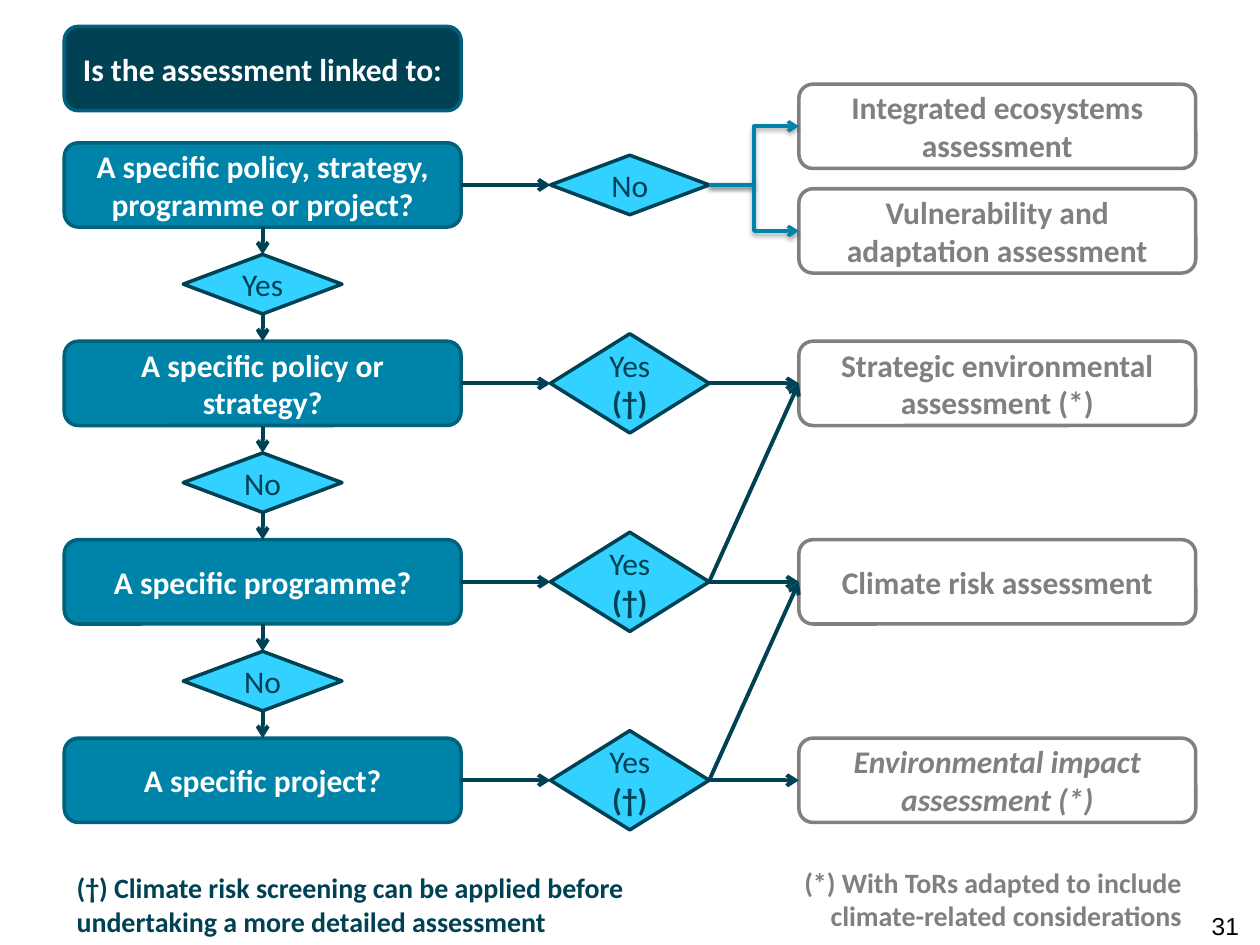
from lxml import etree
from pptx import Presentation
from pptx.dml.color import RGBColor
from pptx.enum import shapes, text
from pptx.oxml import ns
from pptx.util import Pt

NAVY = RGBColor(0x00, 0x42, 0x54)
TEAL = RGBColor(0x00, 0x83, 0xA9)
TEAL_EDGE = RGBColor(0x00, 0x61, 0x7D)
CYAN = RGBColor(0x32, 0xD1, 0xFF)
GREY = RGBColor(0x80, 0x80, 0x80)
WHITE = RGBColor(0xFF, 0xFF, 0xFF)
BLACK = RGBColor(0x00, 0x00, 0x00)

# Column centres, row centres and sizes, in points
LEFT, MIDDLE, RIGHT = 150.1, 359.9, 569.9
ROWS = [105.7 + 113.4 * row for row in range(4)]
BOX = (226.8, 48.2)
LOW_DIAMOND = (90.7, 34)
TALL_DIAMOND = (90.7, 56.7)

# Connection sites of boxes and diamonds
TOP_SITE, LEFT_SITE, BOTTOM_SITE, RIGHT_SITE = range(4)


class FlowChart:
    """Holds the style and the current slide."""

    font = "Calibri"

    def __init__(self, slide):
        self.slide = slide

    def format_run(self, run, size, color, bold=False, italic=False, font=None):
        run.font.name = font or self.font
        run.font.size = Pt(size)
        run.font.color.rgb = color
        run.font.bold = bold
        run.font.italic = italic

    def node(self, kind, center, size, fill, edge):
        (x, y), (width, height) = center, size
        shape = self.slide.shapes.add_shape(
            kind, Pt(x - width / 2), Pt(y - height / 2), Pt(width), Pt(height))
        shape.shadow.inherit = False
        shape.fill.solid()
        shape.fill.fore_color.rgb = fill
        shape.line.color.rgb = edge
        shape.line.width = Pt(2)
        shape.text_frame.word_wrap = True
        shape.text_frame.vertical_anchor = text.MSO_ANCHOR.MIDDLE
        shape.text_frame.paragraphs[0].alignment = text.PP_ALIGN.CENTER
        return shape

    def box(self, label, x, y, fill, edge, color, italic=False):
        shape = self.node(shapes.MSO_SHAPE.ROUNDED_RECTANGLE, (x, y), BOX, fill, edge)
        paragraph = shape.text_frame.paragraphs[0]
        paragraph.text = label
        self.format_run(paragraph.runs[0], 18, color, True, italic)
        return shape

    def question(self, label, y, fill=TEAL):
        return self.box(label, LEFT, y, fill, TEAL_EDGE, WHITE)

    def outcome(self, label, y, italic=False):
        return self.box(label, RIGHT, y, WHITE, GREY, GREY, italic)

    def decision(self, answer, x, y, mark=""):
        size = TALL_DIAMOND if mark else LOW_DIAMOND
        shape = self.node(shapes.MSO_SHAPE.FLOWCHART_DECISION, (x, y), size, CYAN, NAVY)
        paragraph = shape.text_frame.paragraphs[0]
        paragraph.text = answer
        self.format_run(paragraph.runs[0], 18, NAVY)
        if mark:
            run = paragraph.add_run()
            run.text = mark
            self.format_run(run, 18, NAVY, bold=True)
        return shape

    def connector(self, kind, start, start_site, end, end_site, color, width):
        connector = self.slide.shapes.add_connector(kind, 0, 0, 0, 0)
        connector.begin_connect(start, start_site)
        connector.end_connect(end, end_site)
        connector.line.color.rgb = color
        connector.line.width = Pt(width)
        line = connector.line._get_or_add_ln()
        etree.SubElement(line, ns.qn("a:tailEnd"), type="arrow")
        properties = connector._element.spPr
        return etree.SubElement(properties, ns.qn("a:effectLst"))

    def arrow_right(self, start, end):
        self.connector(shapes.MSO_CONNECTOR.STRAIGHT, start, RIGHT_SITE,
                       end, LEFT_SITE, NAVY, 2.25)

    def arrow_down(self, start, end):
        self.connector(shapes.MSO_CONNECTOR.STRAIGHT, start, BOTTOM_SITE,
                       end, TOP_SITE, NAVY, 2.25)

    def elbow(self, start, end):
        effects = self.connector(shapes.MSO_CONNECTOR.ELBOW, start, RIGHT_SITE,
                                 end, LEFT_SITE, TEAL, 2)
        shadow = etree.SubElement(
            effects, ns.qn("a:outerShdw"), blurRad=str(Pt(3.1)), dist=str(Pt(1.6)),
            dir="5400000", rotWithShape="0")
        color = etree.SubElement(shadow, ns.qn("a:srgbClr"), val=str(BLACK))
        etree.SubElement(color, ns.qn("a:alpha"), val="38000")

    def note(self, words, left, top, width, height, size, color,
             align=text.PP_ALIGN.LEFT, bold=True, font=None, inset=None):
        shape = self.slide.shapes.add_textbox(Pt(left), Pt(top), Pt(width), Pt(height))
        frame = shape.text_frame
        frame.word_wrap = True
        if inset is not None:
            frame.margin_left = frame.margin_right = Pt(inset)
            frame.margin_top = frame.margin_bottom = Pt(inset)
        frame.text = words
        frame.paragraphs[0].alignment = align
        self.format_run(frame.paragraphs[0].runs[0], size, color, bold, font=font)


def main():
    presentation = Presentation()
    presentation.slide_width, presentation.slide_height = Pt(720), Pt(540)
    chart = FlowChart(presentation.slides.add_slide(presentation.slide_layouts[6]))

    # Questions in the left column
    chart.question("Is the assessment linked to:", 39.2, NAVY)
    questions = [chart.question(label, y) for label, y in zip((
        "A specific policy, strategy, programme or project?",
        "A specific policy or strategy?",
        "A specific programme?",
        "A specific project?"), ROWS)]

    # Answers that lead down to the next question
    for answer, y, upper, lower in zip(("Yes", "No", "No"), ROWS, questions, questions[1:]):
        diamond = chart.decision(answer, LEFT, y + 56.7)
        chart.arrow_down(upper, diamond)
        chart.arrow_down(diamond, lower)

    # Answers that lead right
    answers = [chart.decision("No", MIDDLE, ROWS[0])]
    answers += [chart.decision("Yes ", MIDDLE, y, "(†)") for y in ROWS[1:]]
    for question, answer in zip(questions, answers):
        chart.arrow_right(question, answer)

    # Outcomes in the right column
    for label, y in (("Integrated ecosystems assessment", 72.2),
                     ("Vulnerability and adaptation assessment", 132)):
        chart.elbow(answers[0], chart.outcome(label, y))
    outcomes = [chart.outcome("Strategic environmental assessment (*)", ROWS[1]),
                chart.outcome("Climate risk assessment", ROWS[2]),
                chart.outcome("Environmental impact assessment (*)", ROWS[3], italic=True)]
    for answer, outcome in zip(answers[1:], outcomes):
        chart.arrow_right(answer, outcome)
    for answer, outcome in zip(answers[2:], outcomes):
        chart.arrow_right(answer, outcome)

    # Footnotes and slide number
    chart.note("(†) Climate risk screening can be applied before undertaking "
               "a more detailed assessment", 36.7, 494, 340, 46, 16, NAVY)
    chart.note("(*) With ToRs adapted to include climate-related considerations",
               433.5, 491, 249, 46, 16, GREY, text.PP_ALIGN.RIGHT)
    chart.note("31", 540, 520.6, 168, 13, 14, BLACK, text.PP_ALIGN.RIGHT,
               bold=False, font="Arial", inset=0)

    presentation.save("out.pptx")


if __name__ == "__main__":
    main()
